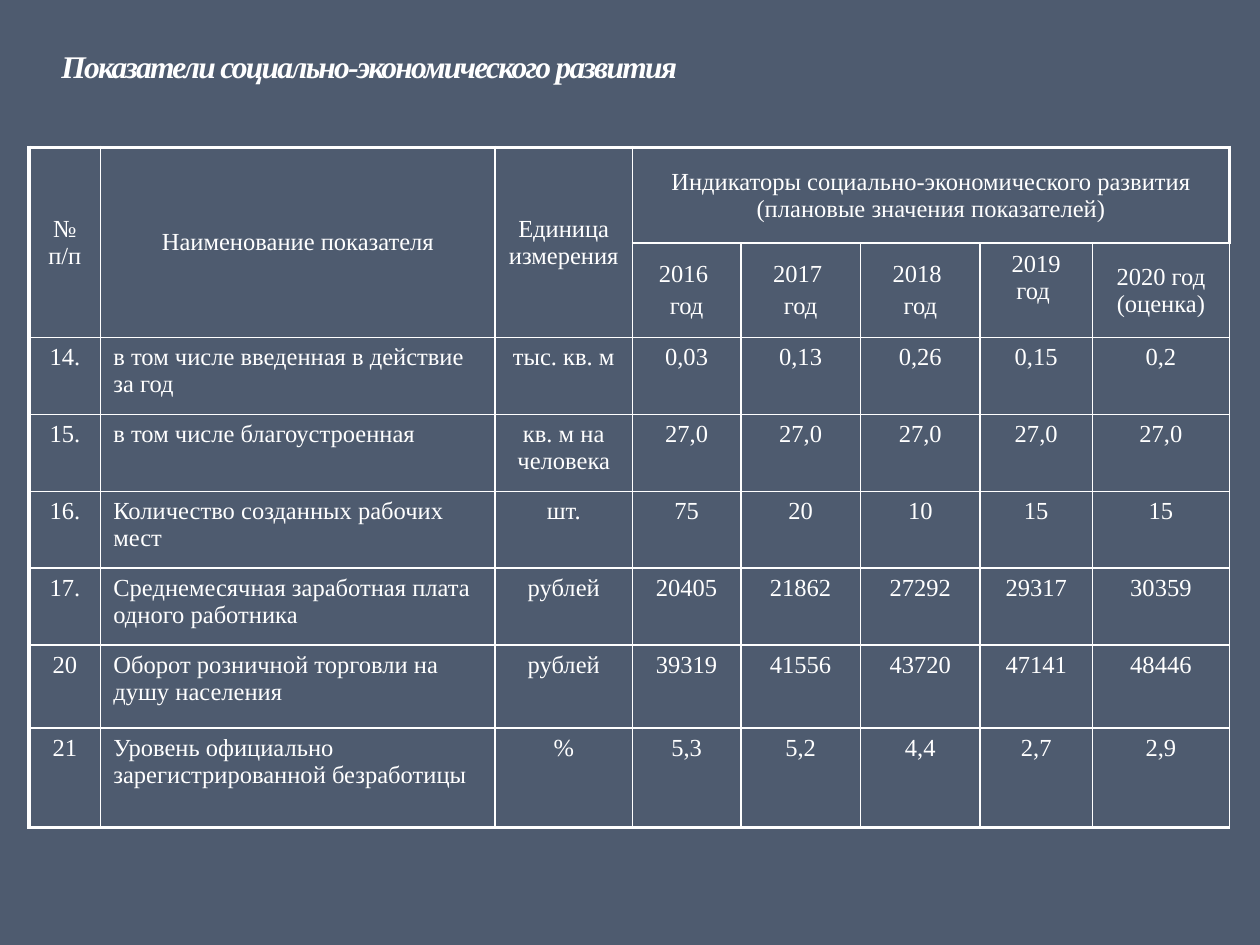
from lxml.etree import SubElement
from pptx import Presentation
from pptx.dml.color import RGBColor
from pptx.enum.text import MSO_ANCHOR, PP_ALIGN
from pptx.oxml.ns import qn
from pptx.util import Inches, Pt

FONT = "Times New Roman"
WHITE, SLATE = "FFFFFF", "4E5B6F"
THIN, THICK = 1, 2.25

COLS = [0.57, 3.13, 1.09, 0.86, 0.95, 0.95, 0.89, 1.09]
ROWS = [0.76, 0.75] + [0.61] * 4 + [0.66, 0.79]
HEADER_ROWS, FIRST_YEAR = 2, 3

# "\n" separates paragraphs; empty cells are covered by merges
CELLS = [
    ["№ п/п", "Наименование показателя", "Единица измерения",
     "Индикаторы социально-экономического развития (плановые значения показателей)",
     "", "", "", ""],
    ["", "", "", "2016 \nгод", "2017 \nгод", "2018 \nгод", "2019 год ", "2020 год (оценка)"],
    ["14.", "в том числе введенная в действие за год", "тыс. кв. м",
     "0,03", "0,13", "0,26", "0,15", "0,2"],
    ["15.", "в том числе благоустроенная", "кв. м на человека"] + ["27,0"] * 5,
    ["16.", "Количество созданных рабочих мест", "шт.", "75", "20", "10", "15", "15"],
    ["17.", "Среднемесячная заработная плата одного работника", "рублей",
     "20405", "21862", "27292", "29317", "30359"],
    ["20", "Оборот розничной торговли на душу населения", "рублей",
     "39319", "41556", "43720", "47141", "48446"],
    ["21", "Уровень официально зарегистрированной безработицы", "%",
     "5,3", "5,2", "4,4", "2,7", "2,9"],
]


def rgb(value):
    return RGBColor.from_string(value)


def set_font(p, size, bold=False, italic=False):
    f = p.font
    f.name, f.size, f.bold, f.italic = FONT, Pt(size), bold, italic
    f.color.rgb = rgb(WHITE)


def add_title(s, text):
    sp = s.shapes.title
    sp.left, sp.top, sp.width, sp.height = map(Inches, (0, 0.3, 5.86, 0.44))
    tf = sp.text_frame
    tf.vertical_anchor = MSO_ANCHOR.MIDDLE
    p = tf.paragraphs[0]
    p.alignment = PP_ALIGN.CENTER
    r = p.add_run()
    r.text = text
    set_font(p, 18, bold=True, italic=True)
    r.font._element.set("spc", "-100")


def set_borders(cell, widths):
    """Draw white borders; widths are points for left, right, top, bottom."""
    tc_pr = cell._tc.get_or_add_tcPr()
    for i, (side, width) in enumerate(zip("LRTB", widths)):
        ln = SubElement(tc_pr, qn(f"a:ln{side}"), w=str(Pt(width)))
        fill = SubElement(ln, qn("a:solidFill"))
        SubElement(fill, qn("a:srgbClr"), val=WHITE)
        tc_pr.remove(ln)
        tc_pr.insert(i, ln)


def fill_cell(cell, text, align, anchor):
    cell.fill.background()
    cell.vertical_anchor = anchor
    tf = cell.text_frame
    tf.text = text
    for p in tf.paragraphs:
        p.alignment = align
        p.space_before = Pt(2.8)
        set_font(p, 14)


def add_indicator_table(s):
    frame = s.shapes.add_table(len(ROWS), len(COLS), Inches(0.23), Inches(1.17),
                               Inches(sum(COLS)), Inches(sum(ROWS)))
    table = frame.table
    table.first_row = table.horz_banding = False
    for col, width in zip(table.columns, COLS):
        col.width = Inches(width)
    for row, height in zip(table.rows, ROWS):
        row.height = Inches(height)

    # Header merges: three tall cells and one wide cell above the years
    for c in range(FIRST_YEAR):
        table.cell(0, c).merge(table.cell(1, c))
    table.cell(0, FIRST_YEAR).merge(table.cell(0, len(COLS) - 1))

    for r, texts in enumerate(CELLS):
        header = r < HEADER_ROWS
        for c, text in enumerate(texts):
            cell = table.cell(r, c)
            align = PP_ALIGN.LEFT if c == 1 and not header else PP_ALIGN.CENTER
            fill_cell(cell, text, align, MSO_ANCHOR.MIDDLE if header else MSO_ANCHOR.TOP)
            heavy = (c == 0, r == 0 and c >= FIRST_YEAR, r == 0, r == len(ROWS) - 1)
            set_borders(cell, [THICK if h else THIN for h in heavy])

    # The 2019 heading sits higher than its neighbours
    table.cell(1, 6).margin_bottom = Inches(0.25)


def main():
    prs = Presentation()
    prs.slide_width, prs.slide_height = Inches(10), Inches(7.5)
    s = prs.slides.add_slide(prs.slide_layouts[5])
    s.background.fill.solid()
    s.background.fill.fore_color.rgb = rgb(SLATE)
    add_title(s, "Показатели социально-экономического развития")
    add_indicator_table(s)
    prs.save("out.pptx")


if __name__ == "__main__":
    main()
